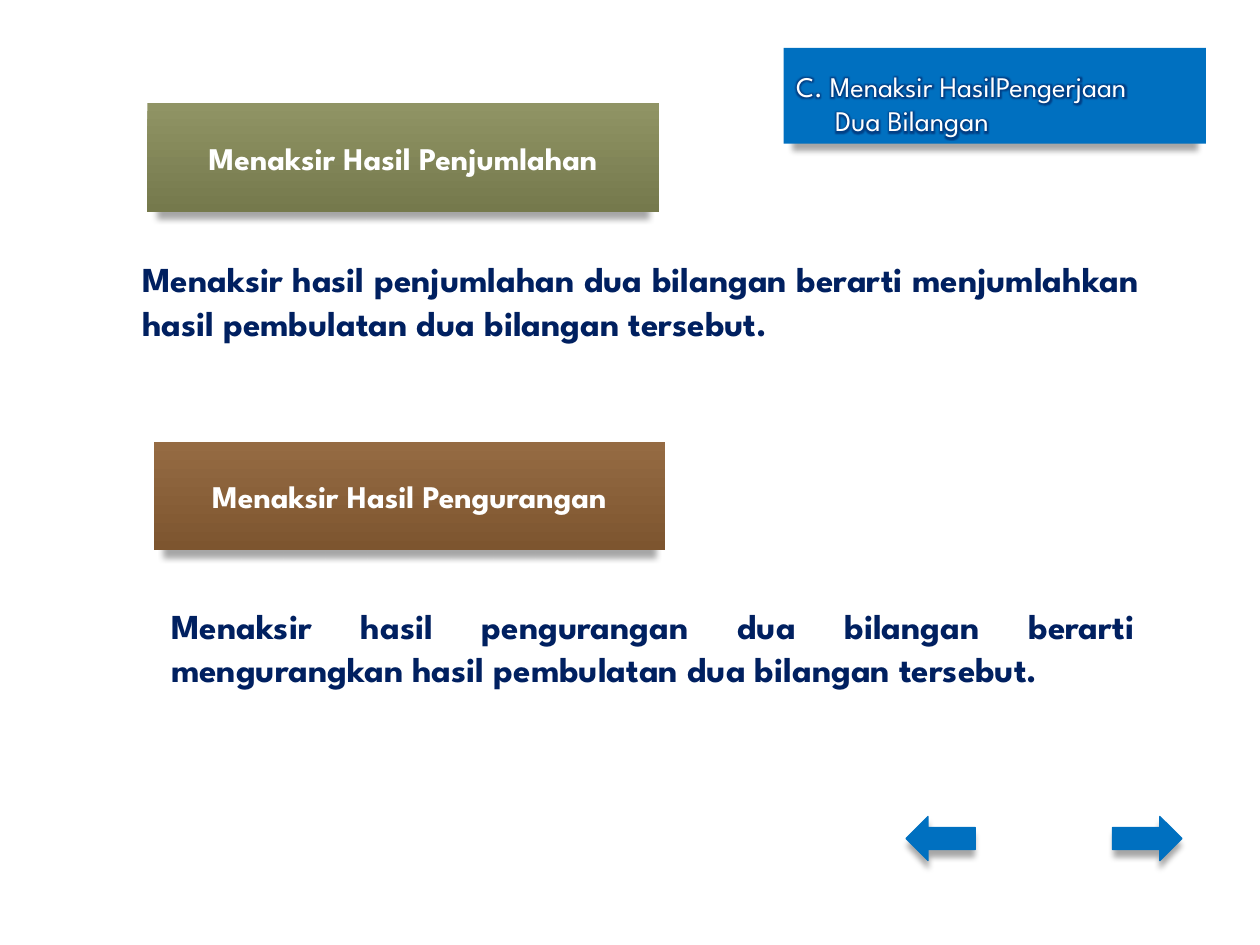
"""Build the slide on estimating sums and differences of two numbers."""
from lxml import etree
from pptx import Presentation
from pptx import util as u
from pptx.dml.color import RGBColor
from pptx.enum import shapes, text
from pptx.oxml import ns

HUES = {
    "white": "FFFFFF", "navy": "002060", "blue": "0070C0", "black": "000000",
    "moss": "909465", "olive": "75794C", "tan": "956B43", "brown": "7D552F",
}
FONT = "League Spartan"
KIND = shapes.MSO_SHAPE
SIDE = text.PP_ALIGN
NODE = '<a:{tag} {decl} {attrs}><a:srgbClr val="{hue}"><a:alpha val="{alpha}"/></a:srgbClr></a:{tag}>'


def effect(tag, attrs, hue, alpha):
    return etree.fromstring(NODE.format(
        tag=tag, decl=ns.nsdecls("a"), attrs=attrs, hue=HUES[hue], alpha=alpha))


def write(shape, words, size=20, hue="navy", bold=True, align=SIDE.LEFT,
          anchor=text.MSO_ANCHOR.TOP, left=0, first=0, tab=None):
    frame = shape.text_frame
    frame.word_wrap = True
    frame.vertical_anchor = anchor
    para = frame.paragraphs[0]
    para.alignment = align
    props = para._p.get_or_add_pPr()
    props.set("marL", str(u.Inches(left)))
    props.set("indent", str(u.Inches(first)))
    parts = [("\t", tab)] if tab else []
    for i, line in enumerate(words.split("\n")):
        if i:
            para.add_line_break()
        for part, pts in (parts if not i else []) + [(line, size)]:
            run = para.add_run()
            run.text = part
            run.font.size = u.Pt(pts)
            run.font.name = FONT
            run.font.bold = bold
            run.font.color.rgb = RGBColor.from_string(HUES[hue])


deck = Presentation()
deck.slide_width, deck.slide_height = u.Inches(10), u.Inches(7.5)
slide = deck.slides.add_slide(deck.slide_layouts[6])

notes = [
    (0.65, 1.94, 8.49, 1.02, "Menaksir hasil penjumlahan dua bilangan berarti "
     "menjumlahkan hasil pembulatan dua bilangan tersebut."),
    (0.88, 4.69, 8.23, 1.13, "Menaksir hasil pengurangan dua bilangan berarti "
     "mengurangkan hasil pembulatan dua bilangan tersebut."),
]
for x, y, w, h, words in notes:
    box = slide.shapes.add_textbox(*map(u.Inches, (x, y, w, h)))
    write(box, words, align=SIDE.JUSTIFY, left=0.38, first=-0.3, tab=24)

blocks = [
    (KIND.RECTANGLE, 1.17, 0.82, 4.06, 0.86, ("moss", "olive"), "Menaksir Hasil Penjumlahan"),
    (KIND.RECTANGLE, 1.22, 3.51, 4.06, 0.86, ("tan", "brown"), "Menaksir Hasil Pengurangan"),
    (KIND.RIGHT_ARROW, 8.83, 6.48, 0.55, 0.35, ("blue",), ""),
    (KIND.LEFT_ARROW, 7.19, 6.48, 0.55, 0.35, ("blue",), ""),
    (KIND.RECTANGLE, 6.22, 0.38, 3.35, 0.76, ("blue",), ""),
]
for kind, x, y, w, h, hues, words in blocks:
    block = slide.shapes.add_shape(kind, *map(u.Inches, (x, y, w, h)))
    if len(hues) == 2:
        block.fill.gradient()
        block.fill.gradient_angle = 270
        for stop, hue, place in zip(block.fill.gradient_stops, hues, (0, 1)):
            stop.color.rgb = RGBColor.from_string(HUES[hue])
            stop.position = place
    else:
        block.fill.solid()
        block.fill.fore_color.rgb = RGBColor.from_string(HUES[hues[0]])
    if kind == KIND.RECTANGLE:
        block.line.fill.background()
    else:
        block.line.color.rgb = RGBColor.from_string(HUES["blue"])
        block.line.width = u.Pt(0.75)
    block.shadow.inherit = False
    block._element.spPr.find(ns.qn("a:effectLst")).append(effect(
        "outerShdw", 'blurRad="44450" dist="50800" dir="5400000" sx="96000" rotWithShape="0"',
        "black", 34000))
    if words:
        write(block, words, size=18, hue="white", align=SIDE.CENTER,
              anchor=text.MSO_ANCHOR.MIDDLE)

head = block
write(head, "C. Menaksir HasilPengerjaan\nDua Bilangan", size=16.2, hue="white",
      bold=False, anchor=text.MSO_ANCHOR.BOTTOM, left=0.31, first=-0.31)
for run in head.text_frame.paragraphs[0].runs:
    glow = etree.Element(ns.qn("a:effectLst"))
    glow.append(effect("glow", 'rad="63500"', "navy", 60000))
    run._r.rPr.find(ns.qn("a:solidFill")).addnext(glow)

deck.save("out.pptx")
